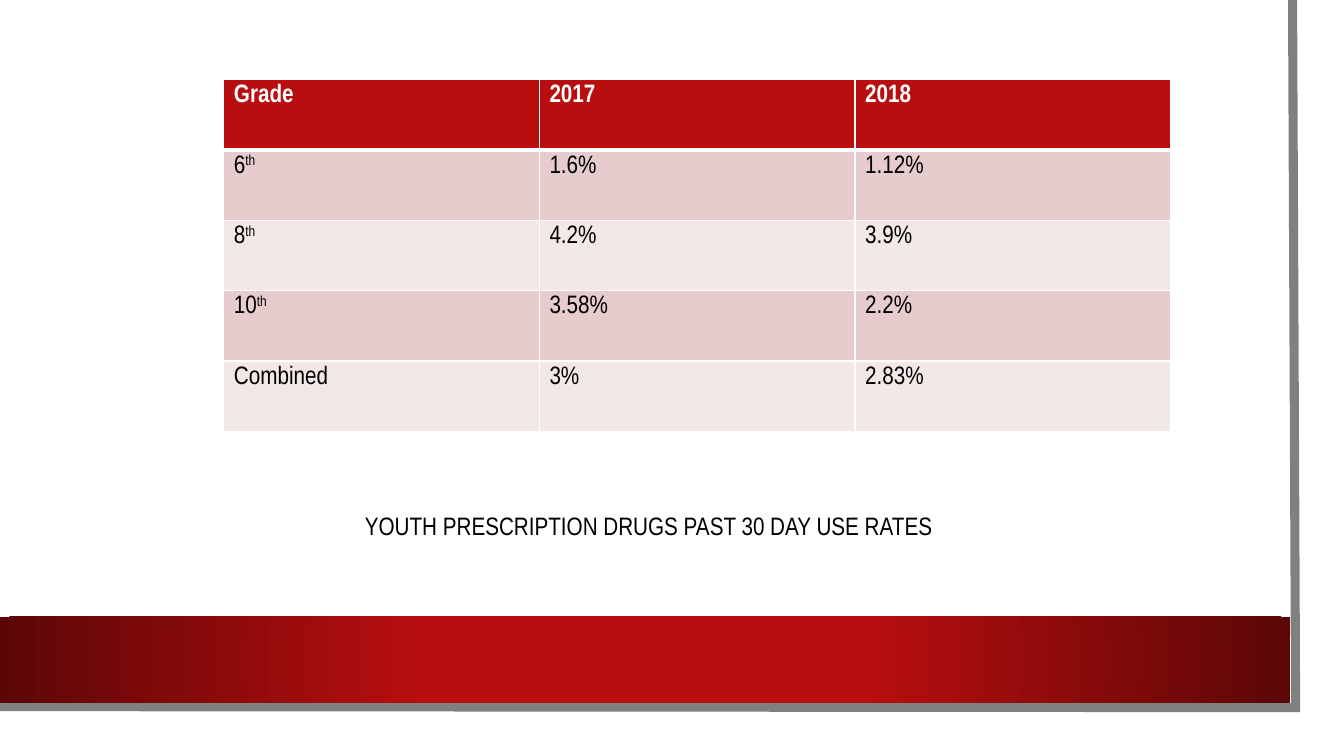
from lxml import etree
from pptx import Presentation
from pptx.dml.color import RGBColor
from pptx.enum.shapes import MSO_SHAPE
from pptx.enum.text import MSO_ANCHOR, PP_ALIGN
from pptx.oxml import parse_xml
from pptx.oxml.ns import nsdecls, qn
from pptx.util import Inches, Pt

COLORS = {
    "white": "FFFFFF",
    "black": "000000",
    "gray": "808080",
    "red": "B80E0F",
    "dark_red": "5C0707",
    "band_dark": "E6CCCC",
    "band_light": "F3E7E7",
}
FONT = "Arial Narrow"
RATES = [
    ("Grade", "2017", "2018"),
    ("6th", "1.6%", "1.12%"),
    ("8th", "4.2%", "3.9%"),
    ("10th", "3.58%", "2.2%"),
    ("Combined", "3%", "2.83%"),
]


def rgb(name):
    return RGBColor.from_string(COLORS[name])


def add_text(p, text, size=18, color="black", bold=False, superscript=False):
    r = p.add_run()
    r.text = text
    r.font.name = FONT
    r.font.size = Pt(size)
    r.font.bold = bold
    r.font.color.rgb = rgb(color)
    if superscript:
        r.font._element.set("baseline", "30000")


def add_rect(s, left, top, width, height, color):
    sp = s.shapes.add_shape(MSO_SHAPE.RECTANGLE, Inches(left), Inches(top),
                            Inches(width), Inches(height))
    sp.shadow.inherit = False
    sp.fill.solid()
    sp.fill.fore_color.rgb = rgb(color)
    sp.line.fill.background()
    return sp


def add_band(s):
    sp = add_rect(s, 0, 6.12, 12.8, 0.85, "red")
    gradient = parse_xml(
        f'<a:gradFill {nsdecls("a")} rotWithShape="1"><a:gsLst>'
        f'<a:gs pos="34000"><a:srgbClr val="{COLORS["red"]}"/></a:gs>'
        f'<a:gs pos="100000"><a:srgbClr val="{COLORS["dark_red"]}"/></a:gs>'
        '</a:gsLst><a:path path="circle">'
        '<a:fillToRect l="50000" t="50000" r="50000" b="50000"/>'
        '</a:path></a:gradFill>')
    solid = sp._element.spPr.find(qn("a:solidFill"))
    solid.getparent().replace(solid, gradient)


def add_page_edge(s):
    builder = s.shapes.build_freeform(Inches(12.82), Inches(0))
    builder.add_line_segments(
        [(Inches(12.85), Inches(7.02)), (Inches(-0.03), Inches(7.01))], close=False)
    sp = builder.convert_to_shape()
    sp.shadow.inherit = False
    sp.fill.background()
    sp.line.color.rgb = rgb("gray")
    sp.line.width = Pt(6.5)
    etree.SubElement(sp.line._get_or_add_ln(), qn("a:miter")).set("lim", "800000")


def add_caption(s, text):
    tf = s.shapes.add_textbox(Inches(0.75), Inches(4.49),
                              Inches(11.37), Inches(1.39)).text_frame
    tf.word_wrap = True
    tf.vertical_anchor = MSO_ANCHOR.MIDDLE
    p = tf.paragraphs[0]
    p.alignment = PP_ALIGN.CENTER
    p.line_spacing = 1.2
    add_text(p, text)


def set_borders(cell, bottom):
    tcPr = cell._tc.get_or_add_tcPr()
    widths = {"lnL": 1, "lnR": 1, "lnT": 1, "lnB": bottom}
    for i, (side, width) in enumerate(widths.items()):
        tcPr.insert(i, parse_xml(
            f'<a:{side} {nsdecls("a")} w="{Pt(width)}"><a:solidFill>'
            f'<a:srgbClr val="{COLORS["white"]}"/></a:solidFill></a:{side}>'))


def fill_cell(cell, text, row):
    header = row == 0
    fill = "red" if header else "band_dark" if row % 2 else "band_light"
    cell.fill.solid()
    cell.fill.fore_color.rgb = rgb(fill)
    set_borders(cell, 3 if header else 1)
    p = cell.text_frame.paragraphs[0]
    stem = text.removesuffix("th")
    add_text(p, stem, color="white" if header else "black", bold=header)
    if stem != text:
        add_text(p, "th", superscript=True)


def add_rates_table(s):
    table = s.shapes.add_table(len(RATES), len(RATES[0]), Inches(2.22), Inches(0.79),
                               Inches(9.39), Inches(3.49)).table
    for row, values in enumerate(RATES):
        for col, text in enumerate(values):
            fill_cell(table.cell(row, col), text, row)


def main():
    prs = Presentation()
    prs.slide_width = Inches(13.33)
    prs.slide_height = Inches(7.5)
    s = prs.slides.add_slide(prs.slide_layouts[6])
    add_rect(s, 0, 0, 13.1, 7.27, "white")
    add_page_edge(s)
    add_band(s)
    add_caption(s, "YOUTH PRESCRIPTION DRUGS PAST 30 DAY USE RATES")
    add_rates_table(s)
    prs.save("out.pptx")


if __name__ == "__main__":
    main()
